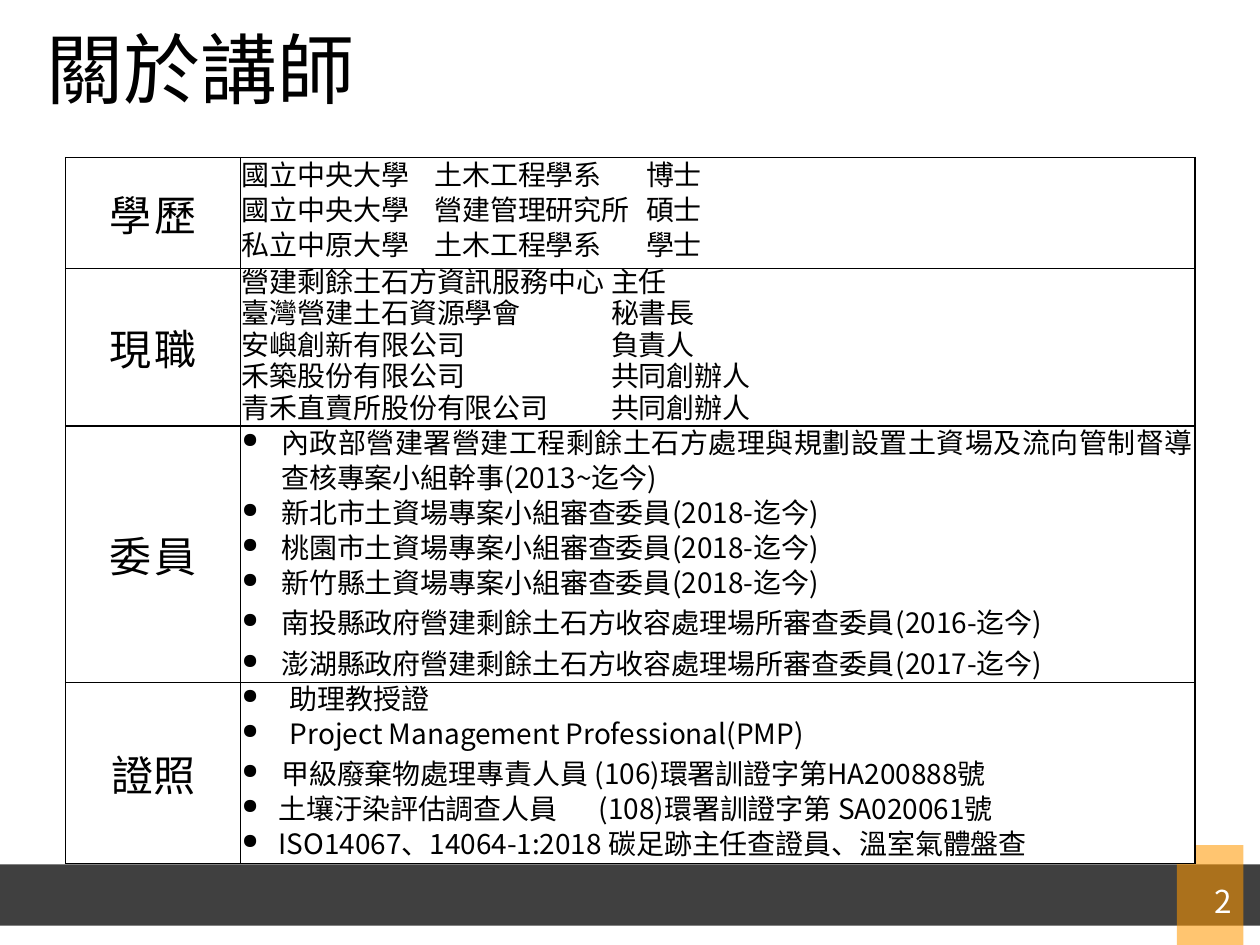
"""Build the lecturer profile slide."""
from dataclasses import dataclass

import pptx
import pptx.dml.color
import pptx.enum.shapes
import pptx.enum.text
import pptx.oxml.ns
import pptx.util
from lxml import etree

Pt = pptx.util.Pt
RGBColor = pptx.dml.color.RGBColor
Align = pptx.enum.text.PP_ALIGN
Anchor = pptx.enum.text.MSO_ANCHOR
qn = pptx.oxml.ns.qn

BLACK = RGBColor(0x00, 0x00, 0x00)
WHITE = RGBColor(0xFF, 0xFF, 0xFF)
DARK = RGBColor(0x40, 0x40, 0x40)
ORANGE = RGBColor(0xFF, 0x99, 0x00)
FONT = "Noto Sans CJK TC"
COLUMNS = (100, 545.5)


@dataclass(frozen=True)
class Line:
    text: str
    spacing: float | None = 20
    indent: float = 0
    tabs: tuple[float, ...] = ()
    align: Align = Align.JUSTIFY


@dataclass(frozen=True)
class Section:
    label: str
    height: float
    lines: list[Line]
    tracking: float = 1.5
    anchor: Anchor = Anchor.MIDDLE


def degree(text: str, spacing: float = 20) -> Line:
    return Line(text, spacing, tabs=(110, 231))


def post(text: str) -> Line:
    return Line(text, 18, tabs=(211,), align=Align.LEFT)


def bullet(text: str, indent: float = 22.5, tabs: tuple[float, ...] = ()) -> Line:
    return Line(text, indent=indent, tabs=tabs)


def loose_bullet(text: str) -> Line:
    return Line(text, None, 22.5, align=Align.LEFT)


SECTIONS = [
    Section("學歷", 63.5, [
        degree("國立中央大學\t土木工程學系\t博士", 18),
        degree("國立中央大學\t營建管理研究所\t碩士"),
        degree("私立中原大學\t土木工程學系\t學士"),
    ]),
    Section("現職", 90, [
        post("營建剩餘土石方資訊服務中心\t主任"),
        post("臺灣營建土石資源學會\t秘書長"),
        post("安嶼創新有限公司\t負責人"),
        post("禾築股份有限公司\t共同創辦人"),
        post("青禾直賣所股份有限公司\t共同創辦人"),
    ]),
    Section("委員", 146.5, [
        bullet("內政部營建署營建工程剩餘土石方處理與規劃設置土資場及流向管制督導查核專案小組幹事(2013~迄今)"),
        bullet("新北市土資場專案小組審查委員(2018-迄今)"),
        bullet("桃園市土資場專案小組審查委員(2018-迄今)"),
        bullet("新竹縣土資場專案小組審查委員(2018-迄今)"),
        loose_bullet("南投縣政府營建剩餘土石方收容處理場所審查委員(2016-迄今)"),
        loose_bullet("澎湖縣政府營建剩餘土石方收容處理場所審查委員(2017-迄今)"),
    ]),
    Section("證照", 103.5, [
        bullet("助理教授證", 27.5),
        bullet("Project Management Professional(PMP)", 27.5),
        loose_bullet("甲級廢棄物處理專責人員 (106)環署訓證字第HA200888號"),
        bullet("土壤汙染評估調查人員\t(108)環署訓證字第 SA020061號", 21, (204,)),
        bullet("ISO14067、14064-1:2018 碳足跡主任查證員、溫室氣體盤查", 21),
    ], 0, Anchor.TOP),
]


def add_run(p, text: str, size: float, color: RGBColor = BLACK, tracking: float = 0) -> None:
    r = p.add_run()
    r.text = text
    r.font.size = Pt(size)
    r.font.name = FONT
    r.font.color.rgb = color
    rPr = r.font._element
    etree.SubElement(rPr, qn("a:ea"), typeface=FONT)
    if tracking:
        rPr.set("spc", str(int(tracking * 100)))


def add_bar(s, left: float, top: float, width: float, height: float, color: RGBColor):
    sp = s.shapes.add_shape(pptx.enum.shapes.MSO_SHAPE.RECTANGLE,
                            Pt(left), Pt(top), Pt(width), Pt(height))
    sp.shadow.inherit = False
    sp.fill.solid()
    sp.fill.fore_color.rgb = color
    sp.line.fill.background()
    return sp


def format_cell(cell, anchor: Anchor) -> None:
    tcPr = cell._tc.get_or_add_tcPr()
    for side in ("a:lnL", "a:lnR", "a:lnT", "a:lnB"):
        ln = etree.SubElement(tcPr, qn(side), w=str(Pt(1)))
        fill = etree.SubElement(ln, qn("a:solidFill"))
        etree.SubElement(fill, qn("a:srgbClr"), val=str(BLACK))
    cell.fill.solid()
    cell.fill.fore_color.rgb = WHITE
    cell.margin_left = cell.margin_right = Pt(0.72)
    cell.margin_top = cell.margin_bottom = Pt(0)
    cell.vertical_anchor = anchor


def add_line(p, line: Line) -> None:
    pPr = p._p.get_or_add_pPr()
    if line.indent:
        pPr.set("marL", str(Pt(line.indent)))
        pPr.set("indent", str(-Pt(line.indent)))
        etree.SubElement(pPr, qn("a:buSzPct"), val="75000")
        etree.SubElement(pPr, qn("a:buChar"), char="●")
    if line.tabs:
        tabs = etree.SubElement(pPr, qn("a:tabLst"))
        for pos in line.tabs:
            etree.SubElement(tabs, qn("a:tab"), pos=str(Pt(pos)), algn="l")
    p.alignment = line.align
    if line.spacing:
        p.line_spacing = Pt(line.spacing)
    add_run(p, line.text, 16)


def add_profile(s, sections: list[Section]) -> None:
    height = sum(section.height for section in sections)
    table = s.shapes.add_table(len(sections), len(COLUMNS), Pt(37.5), Pt(90),
                               Pt(sum(COLUMNS)), Pt(height)).table
    table.first_row = table.horz_banding = False
    for column, width in zip(table.columns, COLUMNS):
        column.width = Pt(width)
    for row, section in zip(table.rows, sections):
        row.height = Pt(section.height)
        label, body = row.cells
        format_cell(label, Anchor.MIDDLE)
        p = label.text_frame.paragraphs[0]
        p.alignment = Align.CENTER
        add_run(p, section.label, 24, tracking=section.tracking)
        format_cell(body, section.anchor)
        tf = body.text_frame
        for i, line in enumerate(section.lines):
            add_line(tf.add_paragraph() if i else tf.paragraphs[0], line)


def main() -> None:
    prs = pptx.Presentation()
    prs.slide_width, prs.slide_height = Pt(720), Pt(540)
    s = prs.slides.add_slide(prs.slide_layouts[5])

    add_bar(s, 0, 494, 720, 35, DARK)
    accent = add_bar(s, 672.5, 483, 38, 58, ORANGE)
    color = accent.fill._xPr.find(".//" + qn("a:srgbClr"))
    etree.SubElement(color, qn("a:alpha"), val="56000")

    title = s.shapes.title
    title.left, title.top, title.width, title.height = Pt(19.5), Pt(12.5), Pt(602), Pt(59)
    tf = title.text_frame
    tf.auto_size = pptx.enum.text.MSO_AUTO_SIZE.NONE
    tf.vertical_anchor = Anchor.MIDDLE
    p = tf.paragraphs[0]
    p.alignment = Align.LEFT
    p.line_spacing = 0.9
    add_run(p, "關於講師", 44)

    tf = s.shapes.add_textbox(Pt(655), Pt(500.5), Pt(56), Pt(29)).text_frame
    tf.word_wrap = True
    tf.vertical_anchor = Anchor.MIDDLE
    p = tf.paragraphs[0]
    p.alignment = Align.RIGHT
    add_run(p, "2", 18, WHITE)

    add_profile(s, SECTIONS)
    prs.save("out.pptx")


if __name__ == "__main__":
    main()
